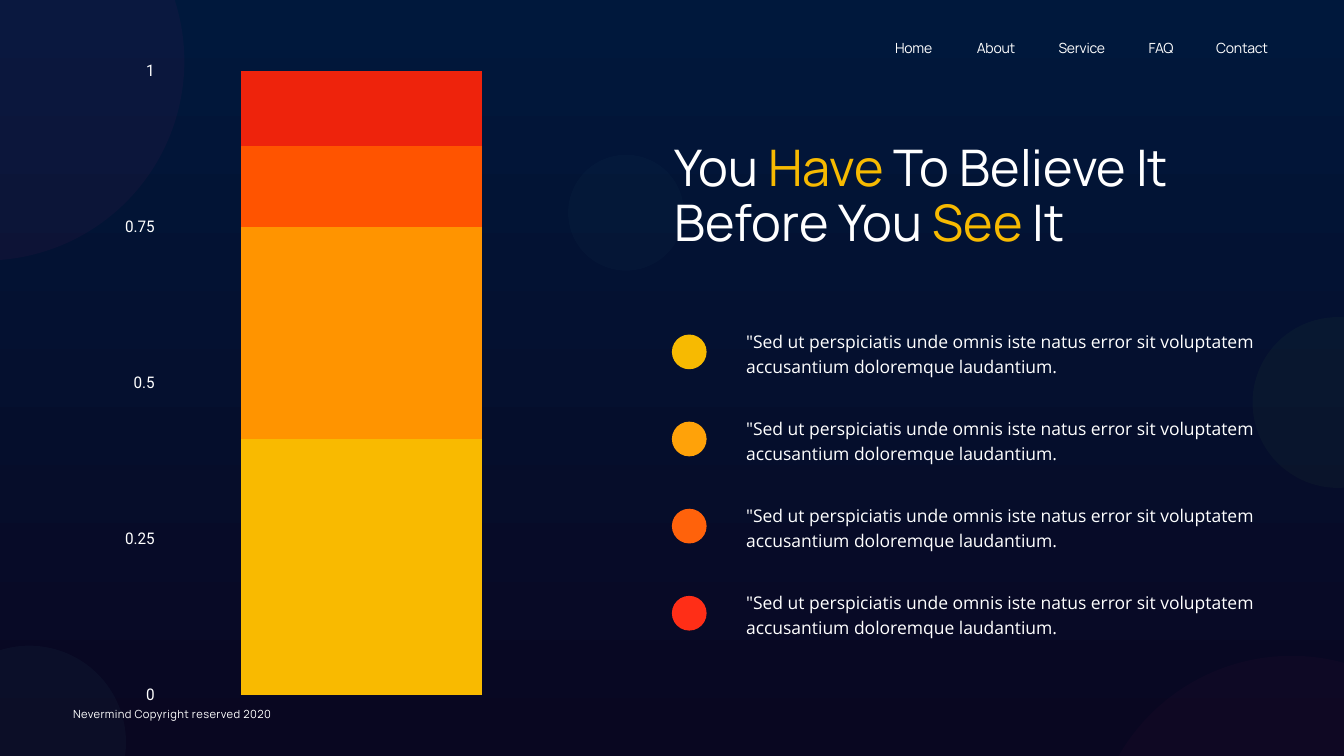
from dataclasses import dataclass

from lxml import etree
from pptx import Presentation
from pptx.chart.data import CategoryChartData
from pptx.dml.color import RGBColor
from pptx.enum.chart import XL_CHART_TYPE, XL_TICK_LABEL_POSITION, XL_TICK_MARK
from pptx.enum.shapes import MSO_SHAPE
from pptx.enum.text import MSO_ANCHOR, MSO_AUTO_SIZE, PP_ALIGN
from pptx.oxml import parse_xml
from pptx.oxml.ns import nsdecls, qn
from pptx.util import Cm, Pt

OVAL = MSO_SHAPE.OVAL
STACK = XL_CHART_TYPE.COLUMN_STACKED_100
NO_LABEL = XL_TICK_LABEL_POSITION.NONE
NO_TICK = XL_TICK_MARK.NONE
TOP = MSO_ANCHOR.TOP
FIXED, GROW = MSO_AUTO_SIZE.NONE, MSO_AUTO_SIZE.SHAPE_TO_FIT_TEXT
LEFT = PP_ALIGN.LEFT


@dataclass(frozen=True)
class Theme:
    head: str = "Manrope"
    body: str = "Open Sans"
    label: str = "Roboto"
    white: str = "FFFFFF"
    gold: str = "F7BA01"
    night: str = "090721"
    navy: str = "00183C"
    pink: str = "CB2A7A"
    green: str = "89FA4E"
    aqua: str = "72FDEA"
    bars: tuple = ("F9BA00", "FF9400", "FF5400", "EE230C")
    dots: tuple = ("F7BA01", "FFA209", "FF620B", "FF2E17")
    title: float = 72
    item: float = 25
    axis: float = 23.3
    menu: float = 20
    foot: float = 16


T = Theme()


def place(shape, box):
    for name, value in zip(("left", "top", "width", "height"), box):
        setattr(shape, name, Cm(value))


def style(font, face, size, color):
    values = {"name": face, "size": Pt(size), "bold": False}
    for name, value in values.items():
        setattr(font, name, value)
    font.color.rgb = RGBColor.from_string(color)


def write(shape, lines, face, size, inset=0.15, ratio=None, space=0, **frame):
    text = shape.text_frame
    values = {"word_wrap": False, "auto_size": GROW, "vertical_anchor": TOP, **frame}
    for side in ("left", "top", "right", "bottom"):
        values["margin_" + side] = Cm(inset)
    for name, value in values.items():
        setattr(text, name, value)
    for index, line in enumerate(lines):
        para = text.add_paragraph() if index else text.paragraphs[0]
        props = para._p.get_or_add_pPr()
        props.set("marL", "0")
        props.set("indent", "0")
        etree.SubElement(props, qn("a:buNone"))
        form = {"alignment": LEFT, "space_before": Pt(0), "line_spacing": ratio}
        for name, value in form.items():
            setattr(para, name, value)
        for words, color in line:
            run = para.add_run()
            run.text = words
            style(run.font, face, size, color)
            if space:
                run._r.get_or_add_rPr().set("spc", str(space))


def label(slide, box, words, size, space):
    shape = slide.shapes.add_textbox(*map(Cm, box))
    write(shape, [[(words, T.white)]], T.head, size, space=space)


def disc(slide, left, top, size, color, alpha=None):
    shape = slide.shapes.add_shape(OVAL, *map(Cm, (left, top, size, size)))
    shape.shadow.inherit = False
    shape.fill.solid()
    shape.fill.fore_color.rgb = RGBColor.from_string(color)
    shape.line.fill.background()
    if alpha:
        tint = shape._element.spPr.find(".//" + qn("a:srgbClr"))
        etree.SubElement(tint, qn("a:alpha")).set("val", str(alpha * 1000))
    return shape


def backdrop(slide):
    fill = slide.background.fill
    fill.gradient()
    fill.gradient_angle = 90
    for stop, color in zip(fill.gradient_stops, (T.night, T.navy)):
        stop.color.rgb = RGBColor.from_string(color)
    discs = (
        (55.04, 33.05, 20.09, T.pink, 3),
        (63.12, 15.98, 8.61, T.green, 3),
        (28.63, 7.8, 5.84, T.aqua, 2),
        (-3.4, 32.54, 9.75, T.aqua, 3),
        (-10.8, -6.96, 20.09, T.pink, 5),
    )
    tree = slide.shapes._spTree
    for index, spot in enumerate(discs):
        tree.insert(2 + index, disc(slide, *spot)._element)


def menu(slide, box):
    left, top, gap, height = box
    links = {"Home": 2.36, "About": 2.36, "Service": 2.77, "FAQ": 1.65, "Contact": 3.07}
    for name, width in links.items():
        label(slide, (left, top, width, height), name, T.menu, -40)
        left += width + gap


def chart(slide, box):
    data = CategoryChartData()
    data.categories = ["1"]
    for index, value in enumerate((41, 34, 13, 12), 1):
        data.add_series(f"Series {index}", [value])
    graph = slide.shapes.add_chart(STACK, *map(Cm, box), data).chart
    graph.has_legend = graph.has_title = False
    style(graph.font, T.label, T.axis, T.white)

    plot = graph.plots[0]
    for name, value in {"gap_width": 70, "overlap": 100, "vary_by_categories": False}.items():
        setattr(plot, name, value)
    for series, color in zip(plot.series, T.bars):
        series.format.fill.solid()
        series.format.fill.fore_color.rgb = RGBColor.from_string(color)

    ticks = {"major_tick_mark": NO_TICK, "minor_tick_mark": NO_TICK, "has_major_gridlines": False}
    for axis in (graph.category_axis, graph.value_axis):
        for name, value in ticks.items():
            setattr(axis, name, value)
        axis.format.line.fill.background()
        style(axis.tick_labels.font, T.label, T.axis, T.white)
        axis.tick_labels.number_format = "General"
        axis.tick_labels.number_format_is_linked = False
    graph.category_axis.tick_label_position = NO_LABEL
    graph.value_axis.major_unit = 0.25

    area = graph._chartSpace.chart.plotArea
    for old in area.findall(qn("c:layout")):
        area.remove(old)
    parts = {"layoutTarget": "inner", "xMode": "edge", "yMode": "edge",
             "x": 0.005, "y": 0.005, "w": 0.99, "h": 0.988}
    inner = "".join(f'<c:{name} val="{value}"/>' for name, value in parts.items())
    area.insert(0, parse_xml(
        f'<c:layout {nsdecls("c")}><c:manualLayout>{inner}</c:manualLayout></c:layout>'))


def title(slide, box):
    shape = slide.shapes.title
    place(shape, box)
    lines = (
        [("You ", T.white), ("Have", T.gold), (" To Believe It", T.white)],
        [("Before You ", T.white), ("See", T.gold), (" It", T.white)],
    )
    write(shape, lines, T.head, T.title, inset=0.13, ratio=0.9, word_wrap=True, auto_size=FIXED)


def items(slide, box):
    left, top, width, step = box
    words = ('"Sed ut perspiciatis unde omnis iste natus error sit voluptatem '
             "accusantium doloremque laudantium.")
    for index, color in enumerate(T.dots):
        row = top + index * step
        shape = slide.placeholders[index + 1]
        place(shape, (left + 3.61, row, width - 3.61, 3.58))
        write(shape, [[(words, T.white)]], T.body, T.item, inset=0.13, ratio=1.2,
              word_wrap=True, auto_size=FIXED)
        disc(slide, left, row + 0.53, 1.75, color)


def main():
    deck = Presentation()
    deck.slide_width, deck.slide_height = Cm(67.73), Cm(38.1)
    slide = deck.slides.add_slide(deck.slide_layouts[4])
    backdrop(slide)
    label(slide, (3.53, 35.48, 11.13, 1.12), "Nevermind Copyright reserved 2020", T.foot, 60)
    menu(slide, (44.96, 1.83, 1.76, 1.27))
    chart(slide, (6.3, 3.1, 22.33, 32.39))
    title(slide, (33.86, 7.09, 30.4, 7.26))
    items(slide, (33.86, 16.33, 29.75, 4.39))
    deck.save("out.pptx")


if __name__ == "__main__":
    main()
